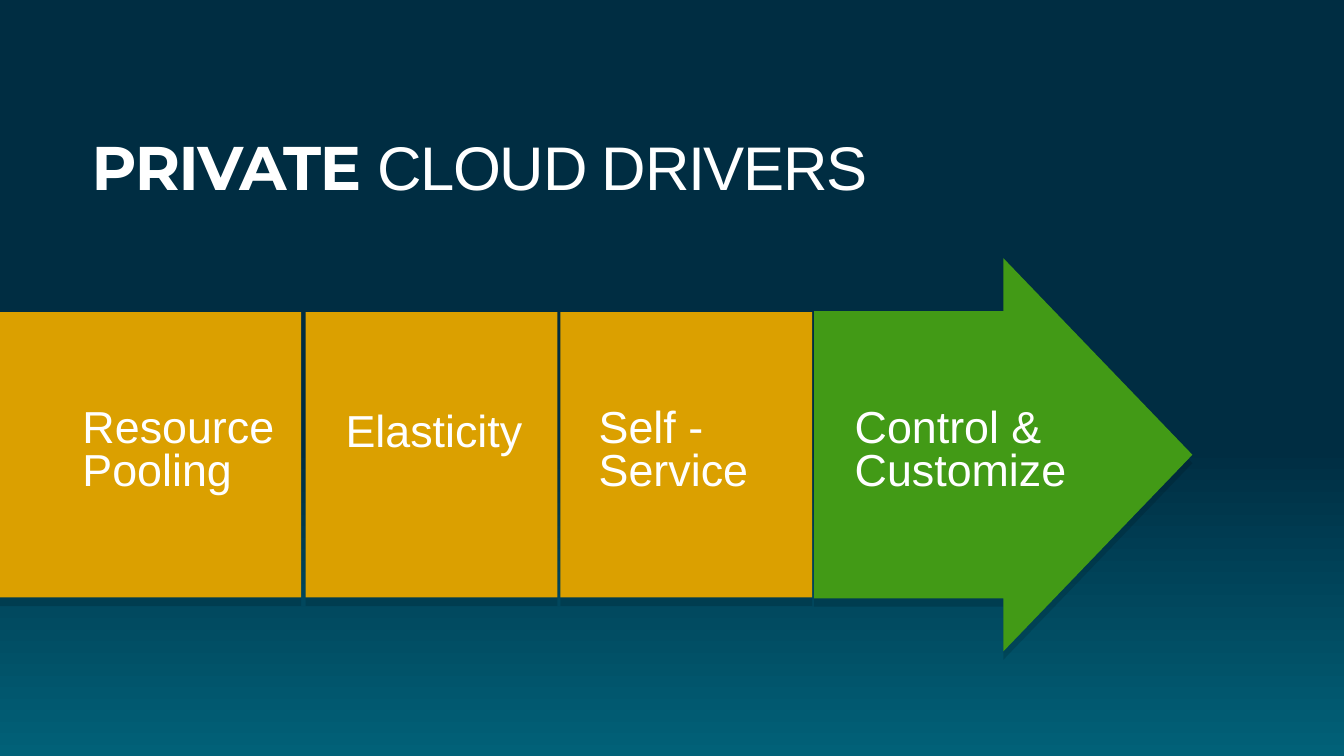
import copy

import pptx
import pptx.dml.color
import pptx.enum.shapes
import pptx.enum.text
import pptx.oxml
import pptx.util
from pptx.util import Cm

NAMESPACE = "http://schemas.openxmlformats.org/drawingml/2006/main"
SHADOW = (
    f'<a:effectLst xmlns:a="{NAMESPACE}">'
    '<a:outerShdw blurRad="0" dist="76200" dir="5400000" algn="t" rotWithShape="0">'
    '<a:srgbClr val="000000"><a:alpha val="12000"/></a:srgbClr>'
    '</a:outerShdw></a:effectLst>'
)


def color(value):
    return pptx.dml.color.RGBColor.from_string(value)


def write(paragraph, text, size=32, font="Arial", bold=False, tracking=0):
    run = paragraph.add_run()
    run.text = text
    run.font.size = pptx.util.Pt(size)
    run.font.name = font
    run.font.bold = bold
    run.font.color.rgb = color("FFFFFF")
    if tracking:
        run.font._element.set("spc", str(tracking))


presentation = pptx.Presentation()
presentation.slide_width = Cm(33.87)
presentation.slide_height = Cm(19.05)
slide = presentation.slides.add_slide(presentation.slide_layouts[5])

background = slide.background.fill
background.gradient()
background.gradient_angle = 270
first_stop = background.gradient_stops[0]._gs
first_stop.addnext(copy.deepcopy(first_stop))
gradient = [(0, "002D42"), (0.59, "002D42"), (1, "016178")]
for stop, (position, value) in zip(background.gradient_stops, gradient):
    stop.position = position
    stop.color.rgb = color(value)

title = slide.shapes.title
title.left, title.top, title.width, title.height = Cm(2.31), Cm(2.24), Cm(25.91), Cm(4.24)
frame = title.text_frame
frame.margin_left = frame.margin_top = frame.margin_right = frame.margin_bottom = 0
frame.auto_size = pptx.enum.text.MSO_AUTO_SIZE.NONE
frame.vertical_anchor = pptx.enum.text.MSO_ANCHOR.MIDDLE
frame.word_wrap = True
paragraph = frame.paragraphs[0]
paragraph.alignment = pptx.enum.text.PP_ALIGN.LEFT
paragraph.line_spacing = 0.8
write(paragraph, "PRIVATE ", size=44, font="Montserrat", bold=True, tracking=-100)
write(paragraph, "CLOUD DRIVERS", size=44, tracking=-100)

RECTANGLE = pptx.enum.shapes.MSO_SHAPE.RECTANGLE
ARROW = pptx.enum.shapes.MSO_SHAPE.RIGHT_ARROW
EXACT = pptx.util.Pt(31)
drivers = [
    ("Resource Pooling", RECTANGLE, "DBA000", 0, 7.59, 7.19, 2.08, 6.1, 2.08, EXACT),
    ("Elasticity", RECTANGLE, "DBA000", 7.7, 6.35, 7.19, 8.71, 5.84, 1.5, 0.9),
    ("Self - Service", RECTANGLE, "DBA000", 14.12, 6.35, 7.19, 15.09, 5.82, 1.78, EXACT),
    ("Control & Customize", ARROW, "429A16", 20.52, 9.53, 9.91, 21.54, 6.83, 2.06, EXACT),
]
middle = 11.46
for (label, kind, fill, left, width, height,
     text_left, text_width, text_height, spacing) in drivers:
    shape = slide.shapes.add_shape(
        kind, Cm(left), Cm(middle - height / 2), Cm(width), Cm(height))
    if kind == ARROW:
        shape.adjustments[0] = 0.73
        shape.adjustments[1] = 0.5
    shape.fill.solid()
    shape.fill.fore_color.rgb = color(fill)
    shape.line.fill.background()
    shape._element.spPr.append(pptx.oxml.parse_xml(SHADOW))

    box = slide.shapes.add_textbox(
        Cm(text_left), Cm(10.21), Cm(text_width), Cm(text_height))
    frame = box.text_frame
    frame.word_wrap = True
    frame.margin_left = frame.margin_right = 0
    frame.margin_top = frame.margin_bottom = Cm(0.1)
    paragraph = frame.paragraphs[0]
    paragraph.line_spacing = spacing
    write(paragraph, label)

presentation.save("out.pptx")
